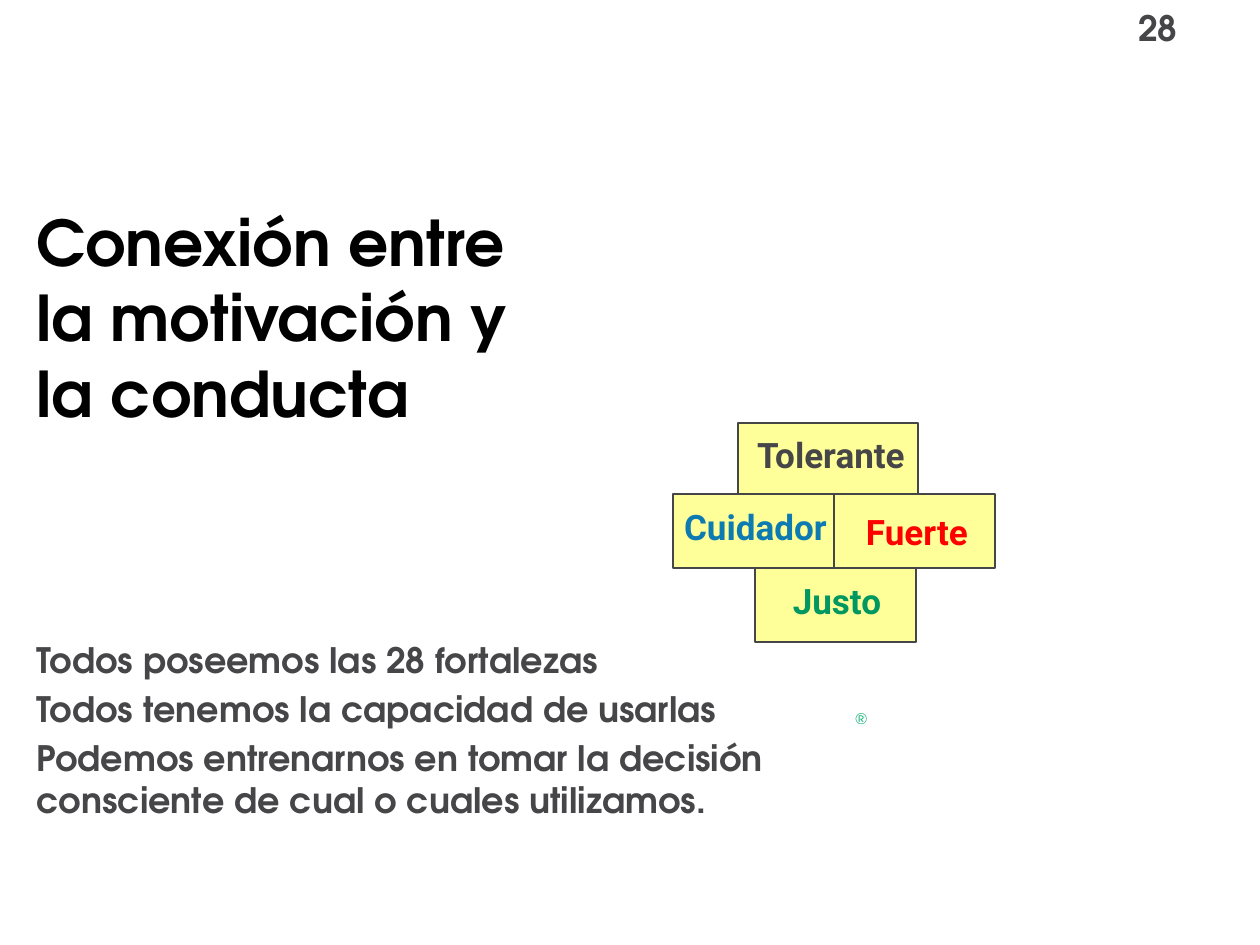
import pptx
import pptx.util
import pptx.dml.color
import pptx.enum.shapes
import pptx.enum.text

PX = 914400 // 126
HEAD, BODY = "TeX Gyre Adventor", "Roboto"
DARK = "464649"
ALIGN = pptx.enum.text.PP_ALIGN
ANCHOR = pptx.enum.text.MSO_ANCHOR

# lines, box (left, top, width, height), size, colour, bold, anchor
TEXTS = [
    (["28"], (1126, 0, 118, 55), 20, DARK, True, ANCHOR.TOP),
    (["®"], (843, 703, 39, 31), 9, "00AC6C", False, ANCHOR.TOP),
    (["Conexión entre la motivación y la conducta"],
     (24, 222, 537, 189), 36, "000000", True, ANCHOR.MIDDLE),
    (["Todos poseemos las 28 fortalezas",
      "Todos tenemos la capacidad de usarlas",
      "Podemos entrenarnos en tomar la decisión consciente de cual o "
      "cuales utilizamos."],
     (24, 632, 774, 222), 20, DARK, True, ANCHOR.TOP),
]

# word, colour, tile (left, top, width, height), label (left, top, width)
TILES = [
    ("Justo", "009761", (755, 568, 161, 74), (777, 573, 120)),
    ("Tolerante", DARK, (738, 423, 180, 74), (722, 427, 218)),
    ("Fuerte", "FF0000", (834, 494, 161, 74), (847, 504, 140)),
    ("Cuidador", "0E7AB2", (673, 494, 161, 74), (663, 499, 185)),
]
LABEL_H = 55


def emu(box):
    return [n * PX for n in box]


def rgb(code):
    return pptx.dml.color.RGBColor.from_string(code)


def add_text(slide, lines, box, size, color, bold, anchor=ANCHOR.TOP,
             face=HEAD, align=ALIGN.LEFT, wrap=True):
    frame = slide.shapes.add_textbox(*emu(box)).text_frame
    frame.word_wrap = wrap
    frame.vertical_anchor = anchor
    frame.text = "\n".join(lines)
    for i, para in enumerate(frame.paragraphs):
        para.alignment = align
        if i:
            para.space_before = pptx.util.Pt(size * 0.2)
        font = para.runs[0].font
        font.name, font.size, font.bold = face, pptx.util.Pt(size), bold
        font.color.rgb = rgb(color)


def add_tile(slide, word, color, tile, label):
    rect = slide.shapes.add_shape(
        pptx.enum.shapes.MSO_SHAPE.RECTANGLE, *emu(tile))
    rect.shadow.inherit = False
    rect.fill.solid()
    rect.fill.fore_color.rgb = rgb("FFFF99")
    rect.line.color.rgb = rgb(DARK)
    rect.line.width = pptx.util.Pt(0.75)
    add_text(slide, [word], (*label, LABEL_H), 20, color, True,
             face=BODY, align=ALIGN.CENTER, wrap=False)


def main():
    deck = pptx.Presentation()
    deck.slide_width, deck.slide_height = emu((1260, 945))
    slide = deck.slides.add_slide(deck.slide_layouts[6])
    for text in TEXTS:
        add_text(slide, *text)
    for tile in TILES:
        add_tile(slide, *tile)
    deck.save("out.pptx")


if __name__ == "__main__":
    main()
